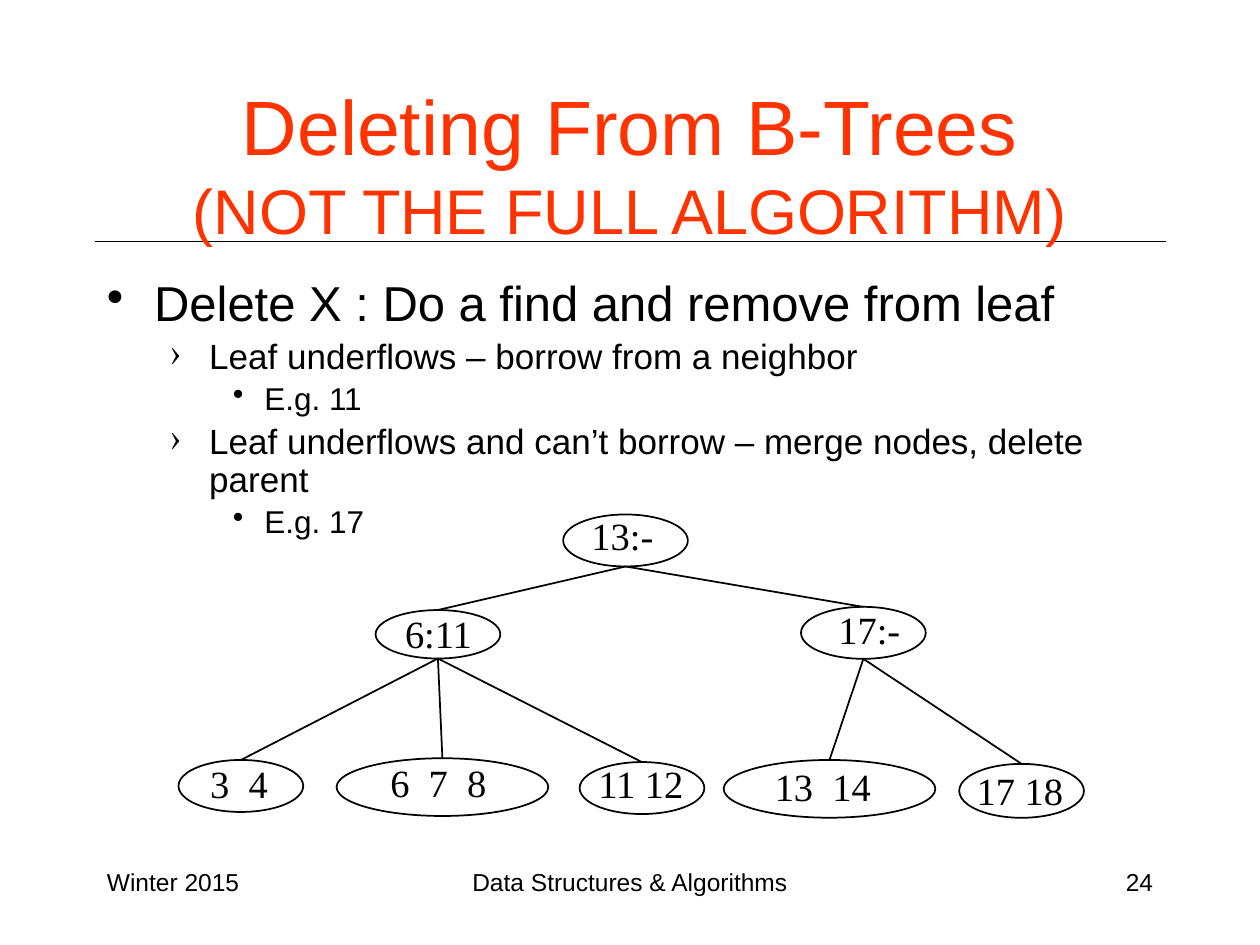
from lxml import etree
from pptx import Presentation
from pptx.dml.color import RGBColor
from pptx.enum.shapes import MSO_CONNECTOR, MSO_SHAPE
from pptx.enum.text import MSO_ANCHOR, PP_ALIGN
from pptx.oxml.ns import qn
from pptx.util import Pt

LEFT, CENTER, RIGHT = PP_ALIGN.LEFT, PP_ALIGN.CENTER, PP_ALIGN.RIGHT
TOP, MIDDLE = MSO_ANCHOR.TOP, MSO_ANCHOR.MIDDLE
OVAL, STRAIGHT = MSO_SHAPE.OVAL, MSO_CONNECTOR.STRAIGHT
COLORS = {"ink": "000000", "title": "FF3300", "paper": "FFFFFF"}
SANS, SERIF = "Arial", "Times New Roman"


class SlideBuilder:
    # Per outline level: text size, left margin, first-line indent, bullet
    LEVELS = [(28, 27, -27, "•"), (20, 58.5, -22.5, "›"), (18, 90, -18, "•")]

    def __init__(self, slide):
        self.slide = slide
        slide.background.fill.solid()
        slide.background.fill.fore_color.rgb = RGBColor.from_string(COLORS["paper"])

    def frame(self, left, top, width, height, anchor=TOP, inset=True):
        box = self.slide.shapes.add_textbox(Pt(left), Pt(top), Pt(width), Pt(height))
        frame = box.text_frame
        frame.word_wrap = True
        frame.vertical_anchor = anchor
        if not inset:
            frame.margin_left = frame.margin_right = Pt(0)
            frame.margin_top = frame.margin_bottom = Pt(0)
        return frame

    def run(self, paragraph, text, size, font=SANS, color="ink"):
        run = paragraph.add_run()
        run.text = text
        run.font.size = Pt(size)
        run.font.name = font
        run.font.color.rgb = RGBColor.from_string(COLORS[color])

    def title(self, heading, subheading):
        paragraph = self.frame(54, 48, 612, 90, MIDDLE).paragraphs[0]
        paragraph.alignment = CENTER
        self.run(paragraph, heading, 44, color="title")
        paragraph.add_line_break()
        self.run(paragraph, subheading, 36, color="title")

    def outline(self, items):
        frame = self.frame(54, 156, 612, 36)
        for index, (level, text) in enumerate(items):
            paragraph = frame.add_paragraph() if index else frame.paragraphs[0]
            size, margin, indent, bullet = self.LEVELS[level]
            paragraph.level = level
            paragraph.line_spacing = 0.9
            props = paragraph._p.get_or_add_pPr()
            props.set("marL", str(Pt(margin)))
            props.set("indent", str(Pt(indent)))
            before = etree.SubElement(props, qn("a:spcBef"))
            etree.SubElement(before, qn("a:spcPct"), val="20000")
            etree.SubElement(props, qn("a:buChar"), char=bullet)
            self.run(paragraph, text, size)

    def footer(self, text, left, width, align):
        paragraph = self.frame(left, 492, width, 36).paragraphs[0]
        paragraph.alignment = align
        self.run(paragraph, text, 14)

    def line(self, start, end, weight=1):
        points = [Pt(value) for value in (*start, *end)]
        connector = self.slide.shapes.add_connector(STRAIGHT, *points)
        connector.line.color.rgb = RGBColor.from_string(COLORS["ink"])
        connector.line.width = Pt(weight)
        etree.SubElement(connector._element.spPr, qn("a:effectLst"))

    def oval(self, left, top, width, height):
        oval = self.slide.shapes.add_shape(OVAL, Pt(left), Pt(top), Pt(width), Pt(height))
        oval.shadow.inherit = False
        oval.fill.background()
        oval.line.color.rgb = RGBColor.from_string(COLORS["ink"])
        oval.line.width = Pt(1)

    def label(self, text, center, top):
        width = 66
        frame = self.frame(center - width / 2, top, width, 22.5, inset=False)
        paragraph = frame.paragraphs[0]
        paragraph.alignment = CENTER
        paragraph.line_spacing = 0.85
        self.run(paragraph, text, 22, SERIF)


def main():
    deck = Presentation()
    deck.slide_width, deck.slide_height = Pt(720), Pt(540)
    builder = SlideBuilder(deck.slides.add_slide(deck.slide_layouts[6]))

    # Rule under the title, and footer
    builder.line((54, 138), (666, 138), 0.75)
    builder.footer("Winter 2015", 54, 150, LEFT)
    builder.footer("Data Structures & Algorithms", 246, 228, CENTER)
    builder.footer("24", 516, 150, RIGHT)

    # Title and outline
    builder.title("Deleting From B-Trees", "(NOT THE FULL ALGORITHM)")
    builder.outline([
        (0, "Delete X : Do a find and remove from leaf"),
        (1, "Leaf underflows – borrow from a neighbor"),
        (2, "E.g. 11"),
        (1, "Leaf underflows and can’t borrow – merge nodes, delete parent"),
        (2, "E.g. 17"),
    ])

    # B-tree nodes: oval (left, top, width, height), label (center, top)
    narrow, wide = 71.3, 121
    nodes = {
        "13:-": ((321.8, 294, narrow, 29.7), (355.7, 296.6)),
        "6:11": ((214.6, 348.6, narrow, 27.7), (250.6, 352.8)),
        "17:-": ((457.7, 346.8, narrow, 29.7), (496.8, 350.6)),
        "3  4": ((102, 434.3, narrow, 29.7), (136.6, 438.5)),
        "6  7  8": ((192.3, 433.3, wide, 33), (250.5, 437.8)),
        "11 12": ((331.2, 435.5, narrow, 29.7), (366.2, 438.5)),
        "13  14": ((413.5, 434.3, wide, 33), (470.2, 439.9)),
        "17 18": ((548.1, 436.5, narrow, 30.8), (582.8, 442.1)),
    }
    for oval, _ in nodes.values():
        builder.oval(*oval)

    # Edges run from the bottom of a parent to the top of each child
    children = {
        "13:-": ["6:11", "17:-"],
        "6:11": ["3  4", "6  7  8", "11 12"],
        "17:-": ["13  14", "17 18"],
    }
    for parent, keys in children.items():
        left, top, width, height = nodes[parent][0]
        for child in keys:
            child_left, child_top, child_width, _ = nodes[child][0]
            builder.line((left + width / 2, top + height),
                         (child_left + child_width / 2, child_top))

    # Node labels
    for text, (_, place) in nodes.items():
        builder.label(text, *place)

    deck.save("out.pptx")


if __name__ == "__main__":
    main()
